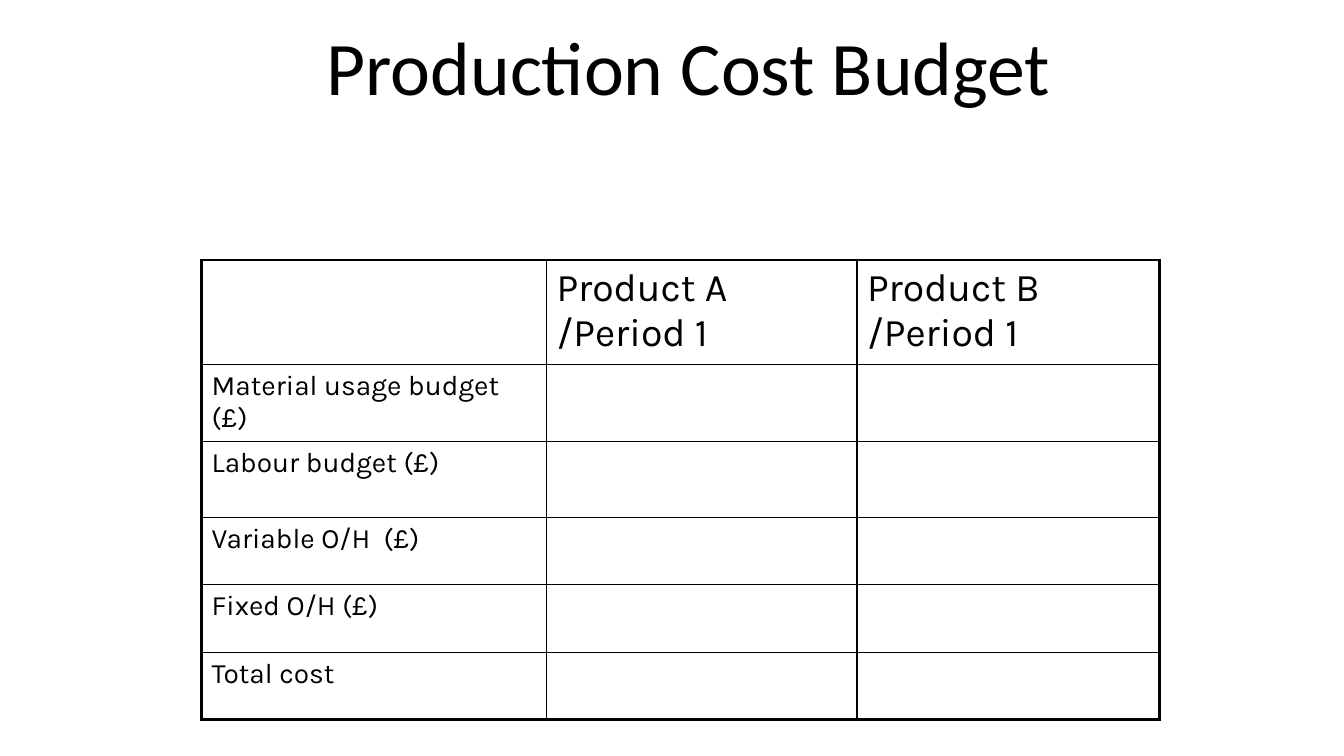
from lxml.etree import SubElement
from pptx import Presentation
from pptx.dml.color import RGBColor
from pptx.enum.text import MSO_ANCHOR as Anchor, PP_ALIGN as Align
from pptx.oxml.ns import qn
from pptx.util import Inches, Pt

COLORS = {"ink": "000000", "page": "FFFFFF"}
THIN, THICK = 1, 2.25
COLUMN_WIDTHS = [3.42, 3.08, 3]
ROW_HEIGHTS = [0.91, 0.72, 0.75, 0.67, 0.67, 0.67]
PRODUCTS = ["Product A /Period 1", "Product B /Period 1"]
COSTS = [
    "Material usage budget (£)",
    "Labour budget (£)",
    "Variable O/H  (£)",
    "Fixed O/H (£)",
    "Total cost",
]


def add_run(paragraph, text, font, size):
    run = paragraph.add_run()
    run.text = text
    run.font.name = font
    run.font.size = Pt(size)
    run.font.color.rgb = RGBColor.from_string(COLORS["ink"])


def add_title(slide, text):
    title = slide.shapes.add_textbox(
        Inches(2.58), Inches(0.33), Inches(8.5), Inches(0.83))
    frame = title.text_frame
    frame.word_wrap = True
    frame.vertical_anchor = Anchor.BOTTOM
    heading = frame.paragraphs[0]
    heading.alignment = Align.CENTER
    heading.line_spacing = 0.9
    add_run(heading, text, "Calibri", 54)


def set_borders(cell, widths):
    """Draw the cell's edges; widths maps L, R, T and B to points."""
    properties = cell._tc.get_or_add_tcPr()
    for position, (side, width) in enumerate(widths.items()):
        line = properties.makeelement(qn(f"a:ln{side}"), {"w": str(Pt(width))})
        fill = SubElement(line, qn("a:solidFill"))
        SubElement(fill, qn("a:srgbClr"), val=COLORS["ink"])
        properties.insert(position, line)


def add_budget_table(slide):
    rows, columns = len(ROW_HEIGHTS), len(COLUMN_WIDTHS)
    budget = slide.shapes.add_table(
        rows, columns, Inches(2), Inches(2.58), Inches(9.5), Inches(4.5)).table
    budget.first_row = budget.horz_banding = False
    for column, width in zip(budget.columns, COLUMN_WIDTHS):
        column.width = Inches(width)
    for row, height in zip(budget.rows, ROW_HEIGHTS):
        row.height = Inches(height)

    labels = [["", *PRODUCTS]] + [[cost, "", ""] for cost in COSTS]
    for r, row_labels in enumerate(labels):
        for c, label in enumerate(row_labels):
            cell = budget.cell(r, c)
            cell.fill.background()
            set_borders(cell, {
                "L": THICK if c == 0 else THIN,
                "R": THICK if c == columns - 1 else THIN,
                "T": THICK if r == 0 else THIN,
                "B": THICK if r == rows - 1 else THIN,
            })
            if label:
                add_run(cell.text_frame.paragraphs[0], label,
                        "Karla", 28 if r == 0 else 20)


def main():
    deck = Presentation()
    deck.slide_width, deck.slide_height = Inches(13.33), Inches(7.5)
    slide = deck.slides.add_slide(deck.slide_layouts[6])
    background = slide.background.fill
    background.solid()
    background.fore_color.rgb = RGBColor.from_string(COLORS["page"])
    add_title(slide, "Production Cost Budget")
    add_budget_table(slide)
    deck.save("out.pptx")


if __name__ == "__main__":
    main()
